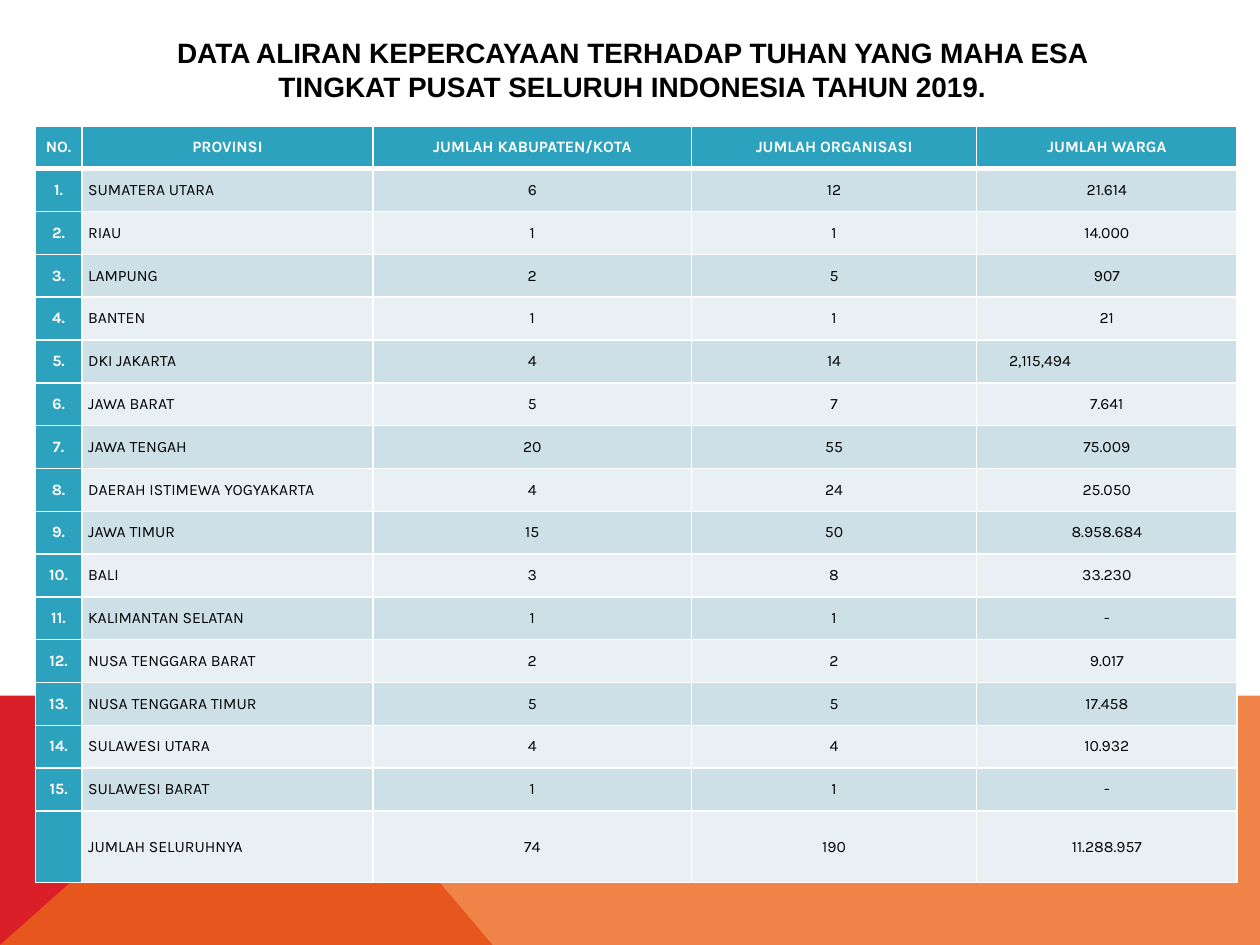
from lxml.etree import SubElement
from pptx import Presentation
from pptx.dml.color import RGBColor
from pptx.enum.text import MSO_ANCHOR, PP_ALIGN
from pptx.oxml.ns import qn
from pptx.util import Inches, Pt

WHITE, BLACK, TEAL = "FFFFFF", "000000", "2DA2BF"
BANDS = ("CDE0E8", "E8F0F4")
COLUMN_WIDTHS = (0.37, 2.31, 2.53, 2.26, 2.07)
ROW_HEIGHT, TOTAL_HEIGHT = 0.34, 0.57
TITLE = ("DATA ALIRAN KEPERCAYAAN TERHADAP TUHAN YANG MAHA ESA "
         "TINGKAT PUSAT SELURUH INDONESIA TAHUN 2019.")
HEADINGS = ("NO.", "PROVINSI", "JUMLAH KABUPATEN/KOTA", "JUMLAH ORGANISASI", "JUMLAH WARGA")
PROVINCES = (
    ("SUMATERA UTARA", "6", "12", "21.614"),
    ("RIAU", "1", "1", "14.000"),
    ("LAMPUNG", "2", "5", "907"),
    ("BANTEN", "1", "1", "21"),
    ("DKI JAKARTA", "4", "14", "2,115,494"),
    ("JAWA BARAT", "5", "7", "7.641"),
    ("JAWA TENGAH", "20", "55", "75.009"),
    ("DAERAH ISTIMEWA YOGYAKARTA", "4", "24", "25.050"),
    ("JAWA TIMUR", "15", "50", "8.958.684"),
    ("BALI", "3", "8", "33.230"),
    ("KALIMANTAN SELATAN", "1", "1", "-"),
    ("NUSA TENGGARA BARAT", "2", "2", "9.017"),
    ("NUSA TENGGARA TIMUR", "5", "5", "17.458"),
    ("SULAWESI UTARA", "4", "4", "10.932"),
    ("SULAWESI BARAT", "1", "1", "-"),
)
TOTAL = ("", "JUMLAH SELURUHNYA", "74", "190", "11.288.957")


def paint(fill, color):
    fill.solid()
    fill.fore_color.rgb = RGBColor.from_string(color)


def style_text(paragraph, font_name, size, color, bold, align):
    paragraph.alignment = align
    for run in paragraph.runs:
        run.font.name = font_name
        run.font.size = Pt(size)
        run.font.bold = bold
        run.font.color.rgb = RGBColor.from_string(color)


def add_band(slide, points, color, opacity=100):
    corners = [(Inches(x), Inches(y)) for x, y in points]
    builder = slide.shapes.build_freeform(*corners[0])
    builder.add_line_segments(corners[1:], close=True)
    band = builder.convert_to_shape()
    band.shadow.inherit = False
    band.line.fill.background()
    paint(band.fill, color)
    if opacity < 100:
        tint = band.fill._xPr.find(qn("a:solidFill"))[0]
        SubElement(tint, qn("a:alpha"), val=str(opacity * 1000))


def add_title(slide):
    box = slide.shapes.add_textbox(Inches(0.83), Inches(0.21), Inches(8.38), Inches(0.68))
    frame = box.text_frame
    frame.word_wrap = True
    frame.vertical_anchor = MSO_ANCHOR.MIDDLE
    frame.text = TITLE
    style_text(frame.paragraphs[0], "Arial", 16, BLACK, True, PP_ALIGN.CENTER)


def add_borders(cell, widths):
    properties = cell._tc.get_or_add_tcPr()
    for side, width in widths.items():
        line = SubElement(properties, qn(f"a:ln{side}"), w=str(Pt(width)))
        SubElement(SubElement(line, qn("a:solidFill")), qn("a:srgbClr"), val=WHITE)


def fill_cell(cell, text, row, column):
    emphasized = row == 0 or column == 0
    indented = text == "2,115,494"
    left_aligned = indented or (column == 1 and row > 0)
    add_borders(cell, {"L": 1, "R": 1, "T": 3 if row == 1 else 1, "B": 3 if row == 0 else 1})
    paint(cell.fill, TEAL if emphasized else BANDS[(row - 1) % 2])
    cell.margin_left = Inches(0.26 if indented else 0.05)
    cell.margin_right = Inches(0.05)
    cell.margin_top = cell.margin_bottom = 0
    cell.vertical_anchor = MSO_ANCHOR.MIDDLE
    cell.text_frame.text = text
    style_text(cell.text_frame.paragraphs[0], "Karla", 9, WHITE if emphasized else BLACK,
               emphasized, PP_ALIGN.LEFT if left_aligned else PP_ALIGN.CENTER)


def add_province_table(slide):
    numbered = [(f"{number}.", *province) for number, province in enumerate(PROVINCES, 1)]
    records = [HEADINGS, *numbered, TOTAL]
    heights = [ROW_HEIGHT] * (len(records) - 1) + [TOTAL_HEIGHT]
    table = slide.shapes.add_table(
        len(records), len(HEADINGS), Inches(0.28), Inches(1),
        Inches(sum(COLUMN_WIDTHS)), Inches(sum(heights))).table
    for column, width in zip(table.columns, COLUMN_WIDTHS):
        column.width = Inches(width)
    for row, (record, height) in enumerate(zip(records, heights)):
        table.rows[row].height = Inches(height)
        for column, text in enumerate(record):
            fill_cell(table.cell(row, column), text, row, column)


def main():
    presentation = Presentation()
    presentation.slide_width, presentation.slide_height = Inches(10), Inches(7.5)
    slide = presentation.slides.add_slide(presentation.slide_layouts[6])
    add_band(slide, [(0, 7.5), (0, 5.52), (2.23, 5.52), (3.91, 7.5)], "DA1F28")
    add_band(slide, [(0, 7.5), (2.23, 5.52), (10, 5.52), (10, 7.5)], "EB641B", 80)
    add_title(slide)
    add_province_table(slide)
    presentation.save("out.pptx")


if __name__ == "__main__":
    main()
